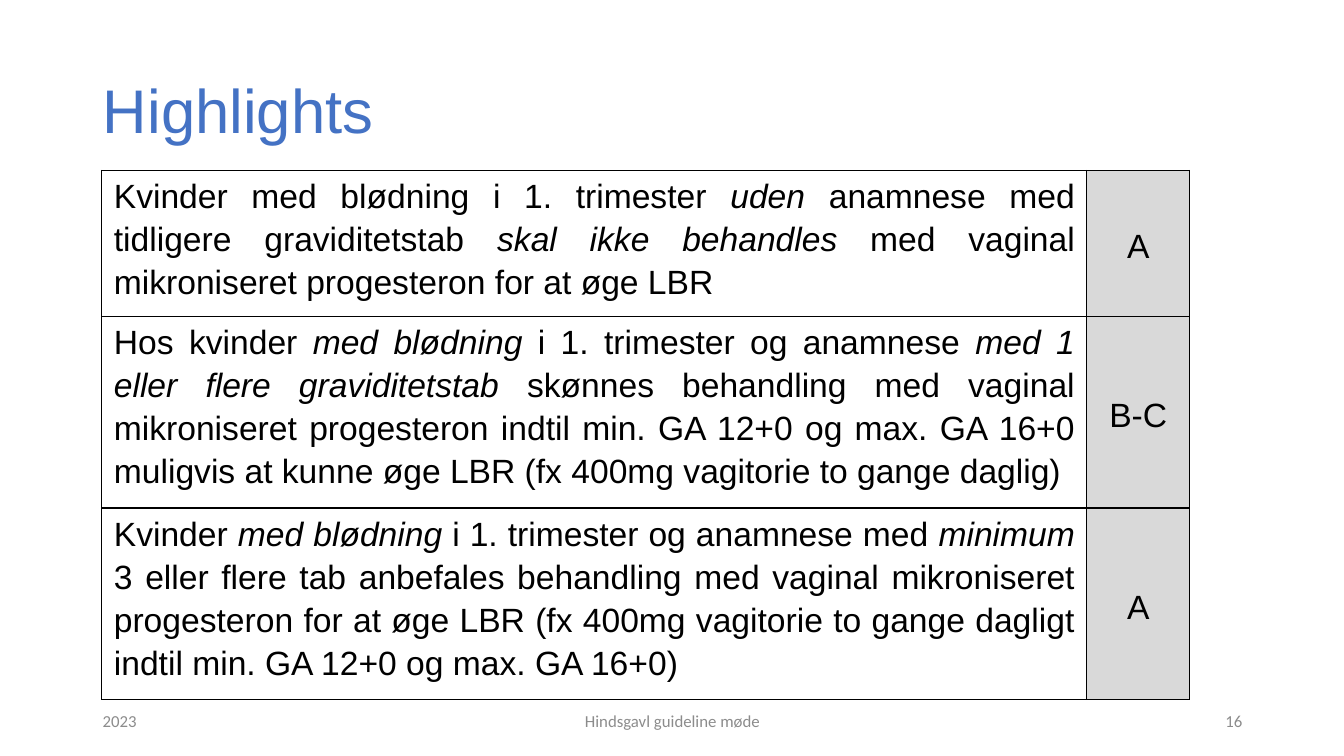
import dataclasses
import typing

import lxml.etree
import pptx
import pptx.dml.color
import pptx.enum.text
import pptx.oxml.ns
import pptx.util

Inches = pptx.util.Inches
Align = pptx.enum.text.PP_ALIGN
Anchor = pptx.enum.text.MSO_ANCHOR


@dataclasses.dataclass(frozen=True)
class Theme:
    heading_font: str = "Arial"
    footer_font: str = "Calibri"
    title_size: int = 44
    table_size: int = 24
    footer_size: int = 12
    title_color: str = "4472C4"
    text_color: str = "000000"
    footer_color: str = "8C8C8C"
    grade_fill: str = "D9D9D9"
    border_color: str = "000000"
    border_width: int = 1


@dataclasses.dataclass(frozen=True)
class Recommendation:
    """A guideline row; asterisks enclose the italic words of the text."""
    text: str
    grade: str
    height: float


@dataclasses.dataclass(frozen=True)
class Footer:
    text: str
    left: float
    width: float
    alignment: Align


THEME = Theme()
TABLE_LEFT, TABLE_TOP = 1.01, 1.69
COLUMN_WIDTHS = (9.77, 1.02)

RECOMMENDATIONS = (
    Recommendation(
        "Kvinder med blødning i 1. trimester *uden* anamnese med tidligere "
        "graviditetstab *skal ikke behandles* med vaginal mikroniseret "
        "progesteron for at øge LBR", "A", 1.45),
    Recommendation(
        "Hos kvinder *med blødning* i 1. trimester og anamnese *med 1 eller "
        "flere graviditetstab* skønnes behandling med vaginal mikroniseret "
        "progesteron indtil min. GA 12+0 og max. GA 16+0 muligvis at kunne "
        "øge LBR (fx 400mg vagitorie to gange daglig)", "B-C", 1.9),
    Recommendation(
        "Kvinder *med blødning* i 1. trimester og anamnese med *minimum *3 "
        "eller flere tab anbefales behandling med vaginal mikroniseret "
        "progesteron for at øge LBR (fx 400mg vagitorie to gange dagligt "
        "indtil min. GA 12+0 og max. GA 16+0)", "A", 1.9),
)

FOOTERS = (
    Footer("2023", 0.92, 3, Align.LEFT),
    Footer("Hindsgavl guideline møde", 4.42, 4.5, Align.CENTER),
    Footer("16", 9.42, 3, Align.RIGHT),
)


def apply_format(target: typing.Any, values: dict[str, typing.Any]) -> None:
    for name, value in values.items():
        setattr(target, name, value)


def write_paragraph(paragraph: typing.Any, text: str, font: str, size: int,
                    color: str, alignment: Align, spacing: float) -> None:
    """Write the text, setting the parts between asterisks in italics."""
    apply_format(paragraph, {"alignment": alignment, "line_spacing": spacing})
    for index, part in enumerate(text.split("*")):
        run = paragraph.add_run()
        run.text = part
        apply_format(run.font, {"name": font, "size": pptx.util.Pt(size),
                                "italic": index % 2 == 1})
        run.font.color.rgb = pptx.dml.color.RGBColor.from_string(color)


def add_title(slide: typing.Any, text: str) -> None:
    title = slide.shapes.title
    apply_format(title, {"left": Inches(0.92), "top": Inches(0.4),
                         "width": Inches(11.5), "height": Inches(1.45)})
    apply_format(title.text_frame, {
        "vertical_anchor": Anchor.MIDDLE, "word_wrap": True,
        "auto_size": pptx.enum.text.MSO_AUTO_SIZE.NONE})
    write_paragraph(title.text_frame.paragraphs[0], text, THEME.heading_font,
                    THEME.title_size, THEME.title_color, Align.LEFT, 0.9)


def add_footer(slide: typing.Any, footer: Footer) -> None:
    box = slide.shapes.add_textbox(Inches(footer.left), Inches(6.95),
                                   Inches(footer.width), Inches(0.4))
    apply_format(box.text_frame, {"vertical_anchor": Anchor.MIDDLE,
                                  "word_wrap": True})
    write_paragraph(box.text_frame.paragraphs[0], footer.text,
                    THEME.footer_font, THEME.footer_size, THEME.footer_color,
                    footer.alignment, 1.0)


def add_borders(cell: typing.Any) -> None:
    properties = cell._tc.get_or_add_tcPr()
    qn = pptx.oxml.ns.qn
    for side in ("a:lnL", "a:lnR", "a:lnT", "a:lnB"):
        line = lxml.etree.SubElement(
            properties, qn(side), w=str(pptx.util.Pt(THEME.border_width)))
        fill = lxml.etree.SubElement(line, qn("a:solidFill"))
        lxml.etree.SubElement(fill, qn("a:srgbClr"), val=THEME.border_color)


def fill_cell(cell: typing.Any, text: str, alignment: Align, anchor: Anchor,
              fill: typing.Optional[str]) -> None:
    apply_format(cell, {
        "margin_left": Inches(0.12), "margin_right": Inches(0.12),
        "margin_top": Inches(0.02), "margin_bottom": 0,
        "vertical_anchor": anchor})
    add_borders(cell)
    if fill is None:
        cell.fill.background()
    else:
        cell.fill.solid()
        cell.fill.fore_color.rgb = pptx.dml.color.RGBColor.from_string(fill)
    write_paragraph(cell.text_frame.paragraphs[0], text, THEME.heading_font,
                    THEME.table_size, THEME.text_color, alignment, 1.15)


def add_recommendations(slide: typing.Any) -> None:
    height = sum(item.height for item in RECOMMENDATIONS)
    table = slide.shapes.add_table(
        len(RECOMMENDATIONS), len(COLUMN_WIDTHS), Inches(TABLE_LEFT),
        Inches(TABLE_TOP), Inches(sum(COLUMN_WIDTHS)), Inches(height)).table
    apply_format(table, {"first_row": False, "horz_banding": False})
    for column, width in zip(table.columns, COLUMN_WIDTHS):
        column.width = Inches(width)
    for row, item in zip(table.rows, RECOMMENDATIONS):
        row.height = Inches(item.height)
        fill_cell(row.cells[0], item.text, Align.JUSTIFY, Anchor.TOP, None)
        fill_cell(row.cells[1], item.grade, Align.CENTER, Anchor.MIDDLE,
                  THEME.grade_fill)


def main() -> None:
    presentation = pptx.Presentation()
    apply_format(presentation, {"slide_width": Inches(13.33),
                                "slide_height": Inches(7.5)})
    slide = presentation.slides.add_slide(presentation.slide_layouts[5])
    add_title(slide, "Highlights")
    for footer in FOOTERS:
        add_footer(slide, footer)
    add_recommendations(slide)
    presentation.save("out.pptx")


if __name__ == "__main__":
    main()
